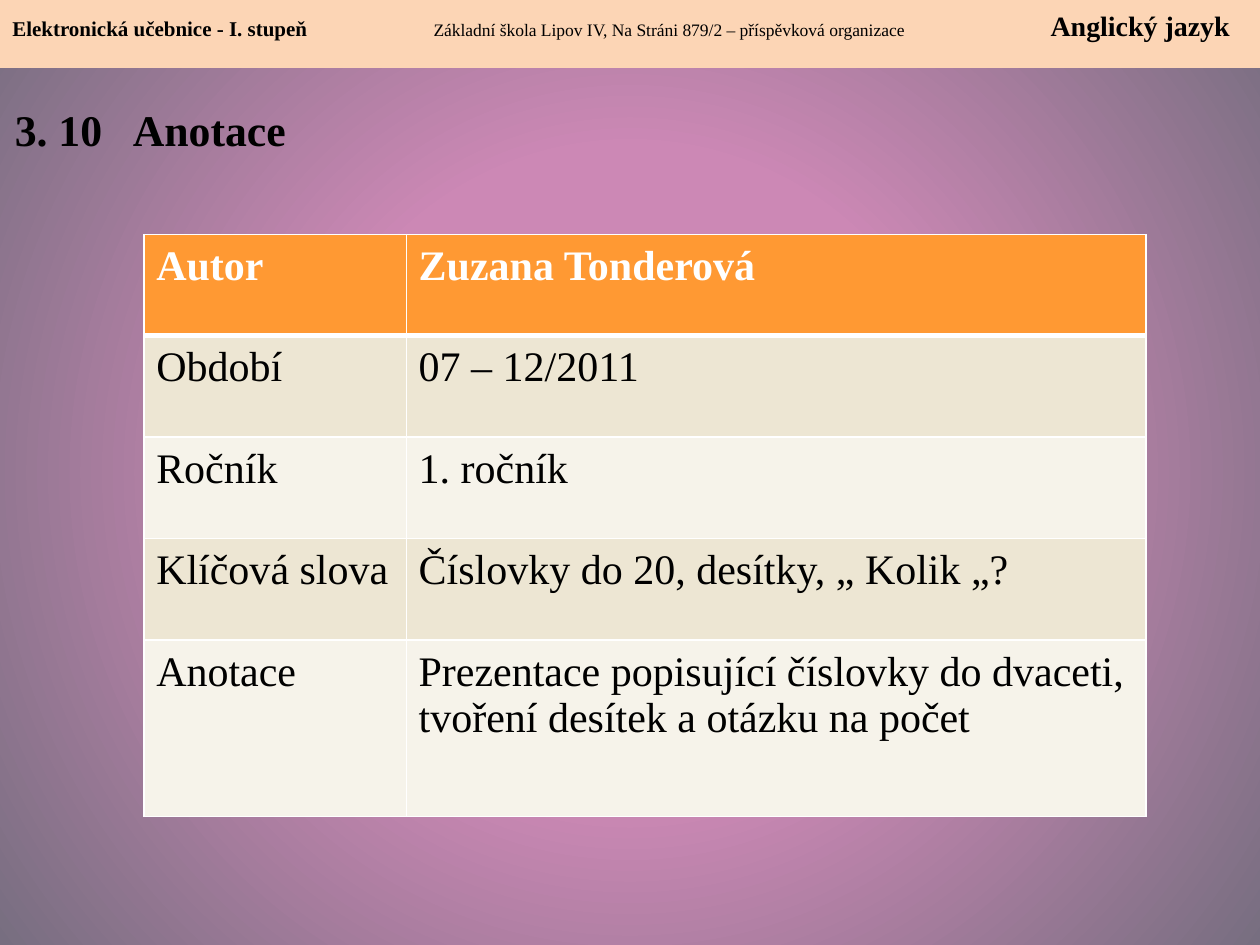
from dataclasses import dataclass

from pptx import Presentation
from pptx import util as u
from pptx.dml.color import RGBColor
from pptx.enum import shapes, text
from pptx.oxml import ns, xmlchemy

FONT = "Times New Roman"
BLACK, WHITE = "000000", "FFFFFF"
ORANGE, SAND, CREAM = "FF9933", "EDE6D3", "F6F3EA"


@dataclass
class Phrase:
    wording: str
    size: float
    bold: bool = False
    color: str = BLACK


@dataclass
class Entry:
    label: str
    value: str
    height: float
    fill: str
    bold: bool = False
    color: str = BLACK
    rule_below: float = 1


ENTRIES = [
    Entry("Autor", "Zuzana Tonderová", 2.03, ORANGE, True, WHITE, 3),
    Entry("Období", "07 – 12/2011", 2.05, SAND),
    Entry("Ročník", "1. ročník", 2.05, CREAM),
    Entry("Klíčová slova", "Číslovky do 20, desítky, „ Kolik „?", 2.05, SAND),
    Entry("Anotace", "Prezentace popisující číslovky do dvaceti, "
          "tvoření desítek a otázku na počet", 3.55, CREAM),
]
HEADING = [
    Phrase("Elektronická učebnice - I. stupeň\t", 12, True),
    Phrase("Základní škola Lipov IV, Na Stráni 879/2 – příspěvková organizace\t", 10),
    Phrase("Anglický jazyk", 16, True),
]


def rgb(color: str) -> RGBColor:
    return RGBColor.from_string(color)


def apply(target, formats: dict) -> None:
    for name, value in formats.items():
        setattr(target, name, value)


def child(parent, tag: str, **attributes):
    element = xmlchemy.OxmlElement(tag)
    for name, value in attributes.items():
        element.set(name, str(value))
    parent.append(element)
    return element


def write(paragraph, phrases: list[Phrase]) -> None:
    for phrase in phrases:
        run = paragraph.add_run()
        run.text = phrase.wording
        apply(run.font, {"name": FONT, "size": u.Pt(phrase.size), "bold": phrase.bold})
        run.font.color.rgb = rgb(phrase.color)


def write_line(shape, phrases: list[Phrase], top_margin: float, stops: list[float]) -> None:
    frame = shape.text_frame
    apply(frame, {"word_wrap": True, "vertical_anchor": text.MSO_ANCHOR.TOP,
                  "margin_top": u.Cm(top_margin)})
    line = frame.paragraphs[0]
    line.alignment = text.PP_ALIGN.LEFT
    tabs = child(line._p.get_or_add_pPr(), "a:tabLst")
    for stop in stops:
        child(tabs, "a:tab", pos=u.Cm(stop), algn="l")
    write(line, phrases)


def paint_background(slide) -> None:
    fill = slide.background.fill
    fill.gradient()
    for stop, (position, color) in zip(fill.gradient_stops, [(0.41, "CC88B5"), (1, "776E80")]):
        stop.position = position
        stop.color.rgb = rgb(color)
    gradient = slide.background._cSld.find(".//" + ns.qn("a:gradFill"))
    gradient.remove(gradient.find(ns.qn("a:lin")))
    circle = child(gradient, "a:path", path="circle")
    child(circle, "a:fillToRect", l=50000, t=50000, r=50000, b=50000)


def draw_borders(cell, widths: dict[str, float]) -> None:
    properties = cell._tc.get_or_add_tcPr()
    for side, width in widths.items():
        line = child(properties, f"a:ln{side}", w=u.Pt(width))
        child(child(line, "a:solidFill"), "a:srgbClr", val=WHITE)


def draw_entries(slide) -> None:
    column_widths = [5.29, 14.91]
    table = slide.shapes.add_table(
        len(ENTRIES), len(column_widths), u.Cm(2.9), u.Cm(4.73),
        u.Cm(sum(column_widths)), u.Cm(sum(entry.height for entry in ENTRIES))).table
    for column, width in zip(table.columns, column_widths):
        column.width = u.Cm(width)
    rule_above = 1
    for row, entry in zip(table.rows, ENTRIES):
        row.height = u.Cm(entry.height)
        for cell, wording in zip(row.cells, (entry.label, entry.value)):
            apply(cell, {"margin_left": u.Cm(0.25), "margin_right": u.Cm(0.25),
                         "margin_top": u.Cm(0.18), "margin_bottom": u.Cm(0.18)})
            draw_borders(cell, {"L": 1, "R": 1, "T": rule_above, "B": entry.rule_below})
            cell.fill.solid()
            cell.fill.fore_color.rgb = rgb(entry.fill)
            write(cell.text_frame.paragraphs[0],
                  [Phrase(wording, 24, entry.bold, entry.color)])
        rule_above = entry.rule_below


def main() -> None:
    deck = Presentation()
    apply(deck, {"slide_width": u.Cm(25.4), "slide_height": u.Cm(19.05)})
    slide = deck.slides.add_slide(deck.slide_layouts[6])
    paint_background(slide)

    banner = slide.shapes.add_shape(
        shapes.MSO_SHAPE.RECTANGLE, 0, 0, deck.slide_width, u.Cm(1.37))
    banner.shadow.inherit = False
    banner.fill.solid()
    banner.fill.fore_color.rgb = rgb("FCD5B5")
    banner.line.fill.background()
    write_line(banner, HEADING, 0.18, [8.49, 20.93])

    draw_entries(slide)

    title = slide.shapes.add_textbox(u.Cm(0.05), u.Cm(1.85), u.Cm(8.1), u.Cm(2.21))
    write_line(title, [Phrase("3. 10\tAnotace", 25, True)], 0.23, [2.38])

    deck.save("out.pptx")


if __name__ == "__main__":
    main()
